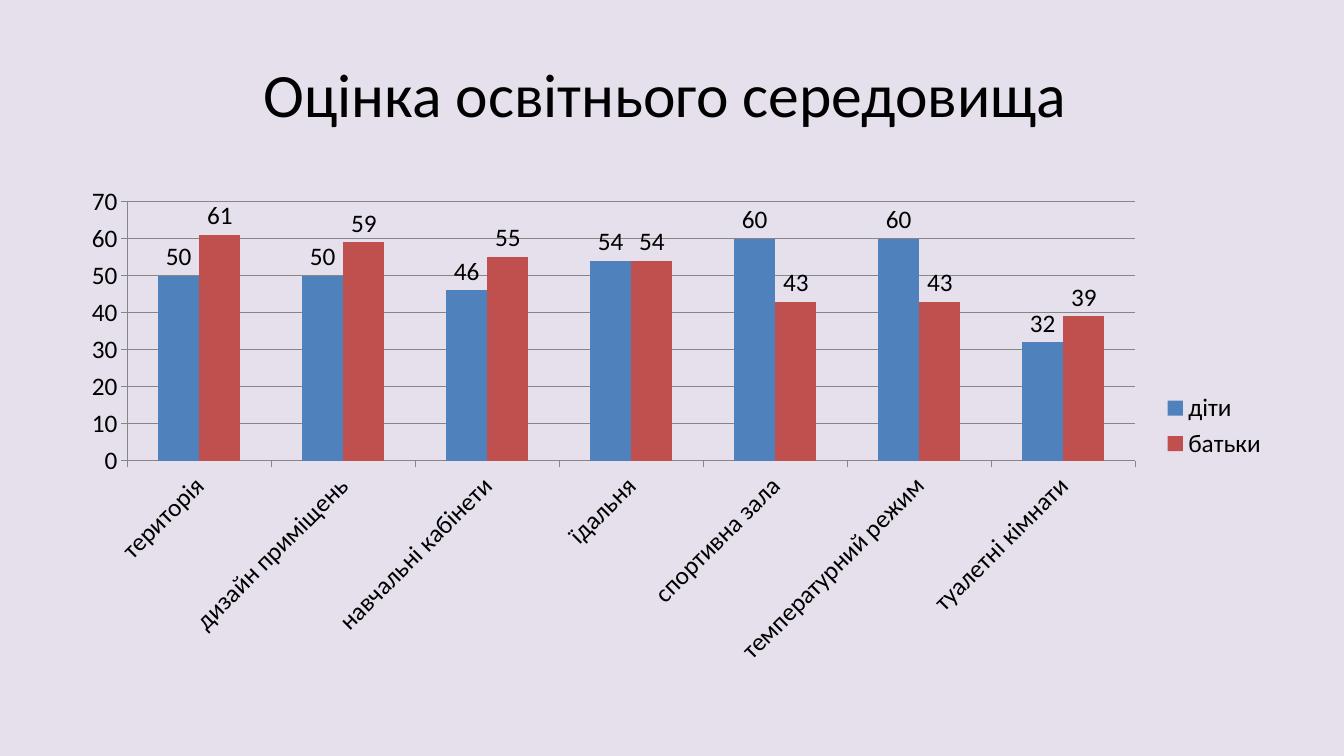
"""Build a slide with a column chart comparing ratings of the school environment."""
from pptx import Presentation
from pptx.chart.data import CategoryChartData
from pptx.dml.color import RGBColor
from pptx.enum.chart import XL_CHART_TYPE, XL_LABEL_POSITION, XL_LEGEND_POSITION, XL_TICK_MARK
from pptx.enum.text import MSO_ANCHOR, PP_ALIGN
from pptx.util import Inches, Pt

COLUMN_CLUSTERED = XL_CHART_TYPE.COLUMN_CLUSTERED
OUTSIDE_END = XL_LABEL_POSITION.OUTSIDE_END
LEGEND_RIGHT = XL_LEGEND_POSITION.RIGHT
TICK_OUTSIDE = XL_TICK_MARK.OUTSIDE
TICK_NONE = XL_TICK_MARK.NONE
MIDDLE = MSO_ANCHOR.MIDDLE
CENTER = PP_ALIGN.CENTER

BACKGROUND = RGBColor(0xE6, 0xE0, 0xEC)
BLACK = RGBColor(0x00, 0x00, 0x00)
GRAY = RGBColor(0x86, 0x86, 0x86)
BLUE = RGBColor(0x4F, 0x81, 0xBD)
RED = RGBColor(0xC0, 0x50, 0x4D)
FONT = "Calibri"

CATEGORIES = [
    "територія", "дизайн приміщень", "навчальні кабінети", "їдальня",
    "спортивна зала", "температурний режим", "туалетні кімнати",
]
RATINGS = [
    ("діти", [50, 50, 46, 54, 60, 60, 32], BLUE),
    ("батьки", [61, 59, 55, 54, 43, 43, 39], RED),
]


def style_font(font, size):
    """Apply the common typeface and colour at the given size."""
    font.name = FONT
    font.size = Pt(size)
    font.color.rgb = BLACK


def add_title(slide, text):
    """Add the centred slide title."""
    box = slide.shapes.add_textbox(Inches(0.67), Inches(0.3), Inches(12), Inches(1.25))
    frame = box.text_frame
    frame.word_wrap = True
    frame.vertical_anchor = MIDDLE
    frame.text = text
    paragraph = frame.paragraphs[0]
    paragraph.alignment = CENTER
    style_font(paragraph.runs[0].font, 44)


def style_axis(axis):
    """Give an axis its gray line, outer ticks and label font."""
    axis.major_tick_mark = TICK_OUTSIDE
    axis.minor_tick_mark = TICK_NONE
    axis.format.line.color.rgb = GRAY
    axis.format.line.width = Pt(0.75)
    style_font(axis.tick_labels.font, 18)


def style_series(series, color):
    """Colour a series and show its values above the columns."""
    series.format.fill.solid()
    series.format.fill.fore_color.rgb = color
    series.invert_if_negative = False
    labels = series.data_labels
    labels.show_value = True
    labels.position = OUTSIDE_END
    style_font(labels.font, 18)


def add_rating_chart(slide):
    """Add the clustered column chart of the ratings."""
    data = CategoryChartData()
    data.categories = CATEGORIES
    for name, values, _ in RATINGS:
        data.add_series(name, values)
    frame = slide.shapes.add_chart(
        COLUMN_CLUSTERED, Inches(0.67), Inches(1.75), Inches(12), Inches(4.95), data)
    chart = frame.chart
    style_font(chart.font, 18)
    chart.has_title = False
    chart.has_legend = True
    chart.legend.position = LEGEND_RIGHT
    chart.legend.include_in_layout = False
    style_font(chart.legend.font, 18)

    plot = chart.plots[0]
    plot.gap_width = 150
    plot.overlap = 0
    plot.vary_by_categories = False
    for series, (_, _, color) in zip(plot.series, RATINGS):
        style_series(series, color)

    for axis in (chart.category_axis, chart.value_axis):
        style_axis(axis)
    chart.category_axis._element.txPr.bodyPr.set("rot", "-2700000")
    value_axis = chart.value_axis
    value_axis.minimum_scale = 0
    value_axis.maximum_scale = 70
    value_axis.major_unit = 10
    value_axis.has_major_gridlines = True
    value_axis.major_gridlines.format.line.color.rgb = GRAY
    value_axis.major_gridlines.format.line.width = Pt(0.75)


def main():
    """Create the presentation and save it."""
    presentation = Presentation()
    presentation.slide_width = Inches(13.33)
    presentation.slide_height = Inches(7.5)
    slide = presentation.slides.add_slide(presentation.slide_layouts[6])
    slide.background.fill.solid()
    slide.background.fill.fore_color.rgb = BACKGROUND
    add_title(slide, "Оцінка освітнього середовища ")
    add_rating_chart(slide)
    presentation.save("out.pptx")


if __name__ == "__main__":
    main()
